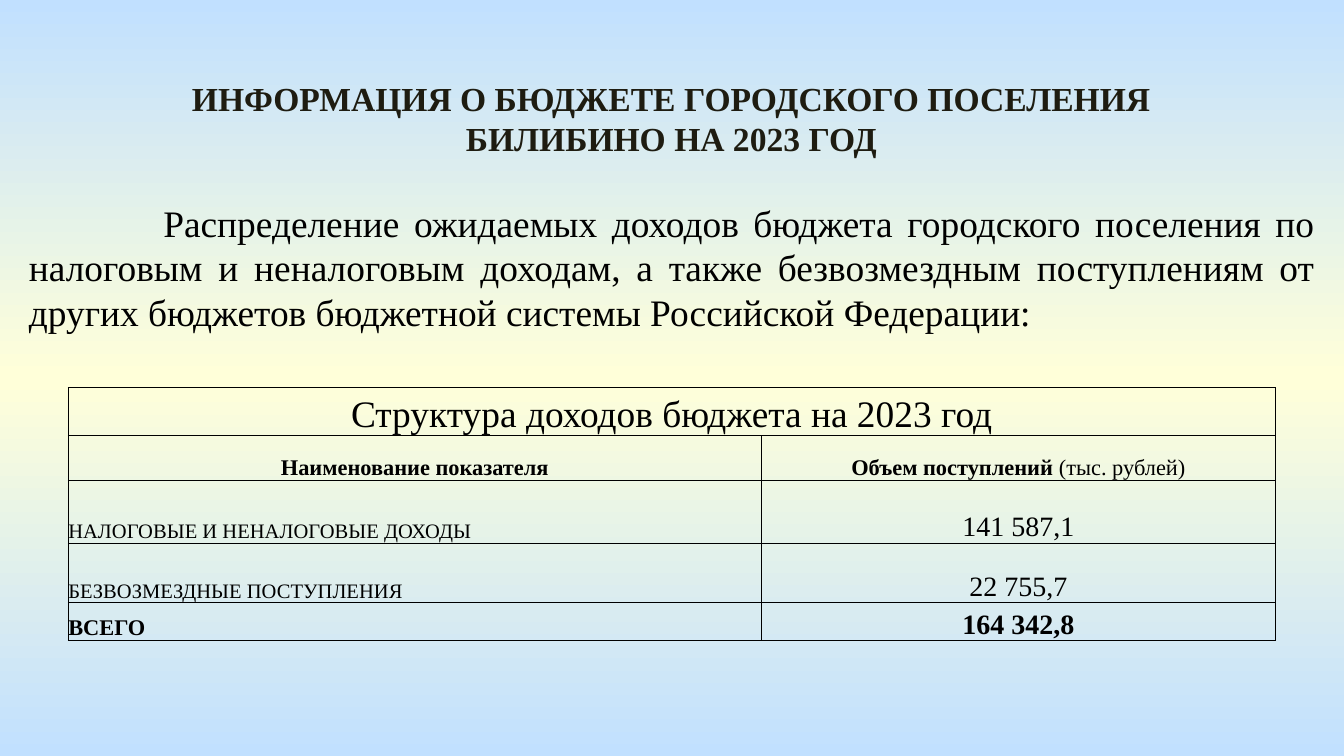
from typing import NamedTuple

from lxml.etree import SubElement
from pptx import Presentation
from pptx.dml.color import RGBColor
from pptx.enum.shapes import MSO_SHAPE as SHAPE
from pptx.enum.text import MSO_ANCHOR as ANCHOR, MSO_AUTO_SIZE as AUTO, PP_ALIGN as ALIGN
from pptx.oxml.ns import qn
from pptx.util import Pt

COLORS = {"sky": "C1E0FF", "cream": "FFFFD9", "title": "1E1C11", "text": "000000"}
FONT = "Times New Roman"


class Row(NamedTuple):
    """One table row with a name and an amount."""
    height: float
    name: str
    amount: str
    name_size: float
    amount_size: float
    bold: bool = False
    align: ALIGN = ALIGN.LEFT
    unit: str = ""
    margin: float = 0


ROWS = [
    Row(25.5, "Структура доходов бюджета на 2023 год", "", 20, 20, align=ALIGN.CENTER),
    Row(24.2, "Наименование показателя", "Объем поступлений ", 12, 12, True,
        ALIGN.CENTER, "(тыс. рублей)", 5),
    Row(33.4, "НАЛОГОВЫЕ И НЕНАЛОГОВЫЕ ДОХОДЫ", "141 587,1", 11, 15),
    Row(32, "БЕЗВОЗМЕЗДНЫЕ ПОСТУПЛЕНИЯ", "22 755,7", 11, 15),
    Row(20.4, "ВСЕГО", "164 342,8", 12, 15, True),
]


def write(p, text: str, *, size: float, bold: bool = False, color: str = "text",
          align: ALIGN = ALIGN.CENTER) -> None:
    """Add a formatted run to a paragraph."""
    p.alignment = align
    r = p.add_run()
    r.text = text
    r.font.name, r.font.size, r.font.bold = FONT, Pt(size), bold
    r.font.color.rgb = RGBColor.from_string(COLORS[color])


def paint_background(s) -> None:
    """Fill the slide with a vertical three-stop gradient."""
    fill = s.background.fill
    fill.gradient()
    fill.gradient_angle = 270
    stops = next(s.element.iter(qn("a:gsLst")))
    stops.clear()
    for pos, name in ((0, "sky"), (50, "cream"), (100, "sky")):
        stop = SubElement(stops, qn("a:gs"), pos=str(pos * 1000))
        SubElement(stop, qn("a:srgbClr"), val=COLORS[name])


def style_cell(cell, margin: float = 0) -> None:
    """Give a cell thin borders, no fill and bottom-anchored text."""
    tc_pr = cell._tc.get_or_add_tcPr()
    for side in ("lnL", "lnR", "lnT", "lnB"):
        ln = SubElement(tc_pr, qn(f"a:{side}"), w=str(Pt(0.5)))
        line_fill = SubElement(ln, qn("a:solidFill"))
        SubElement(line_fill, qn("a:srgbClr"), val=COLORS["text"])
    cell.fill.background()
    cell.vertical_anchor = ANCHOR.BOTTOM
    cell.margin_left = cell.margin_right = Pt(margin)
    cell.margin_top = cell.margin_bottom = 0


def add_title(s) -> None:
    """Add the centred slide title."""
    sp = s.shapes.add_textbox(Pt(81.4), Pt(38.2), Pt(556.6), Pt(51))
    tf = sp.text_frame
    tf.word_wrap, tf.auto_size = True, AUTO.SHAPE_TO_FIT_TEXT
    write(tf.paragraphs[0], "ИНФОРМАЦИЯ О БЮДЖЕТЕ ГОРОДСКОГО ПОСЕЛЕНИЯ БИЛИБИНО НА 2023 ГОД",
          size=18, bold=True, color="title")


def add_intro(s) -> None:
    """Add the justified paragraph on a box that shows the slide background."""
    sp = s.shapes.add_shape(SHAPE.RECTANGLE, Pt(8.4), Pt(103), Pt(703.2), Pt(80))
    sp.shadow.inherit = False
    sp.line.fill.background()
    sp.element.set("useBgFill", "1")
    tf = sp.text_frame
    tf.word_wrap, tf.auto_size = True, AUTO.SHAPE_TO_FIT_TEXT
    p = tf.paragraphs[0]
    write(p, "Распределение ожидаемых доходов бюджета городского поселения по налоговым "
          "и неналоговым доходам, а также безвозмездным поступлениям от других бюджетов "
          "бюджетной системы Российской Федерации:", size=20, align=ALIGN.JUSTIFY)
    p._p.get_or_add_pPr().set("indent", str(Pt(72)))


def add_income_table(s) -> None:
    """Add the table of budget income."""
    widths = (371.4, 275.2)
    height = sum(row.height for row in ROWS)
    table = s.shapes.add_table(len(ROWS), len(widths), Pt(36.6), Pt(207.8),
                               Pt(sum(widths)), Pt(height)).table
    table.first_row = table.horz_banding = False
    for col, width in zip(table.columns, widths):
        col.width = Pt(width)
    for i, row in enumerate(ROWS):
        table.rows[i].height = Pt(row.height)
        name, amount = table.cell(i, 0), table.cell(i, 1)
        style_cell(name)
        style_cell(amount, row.margin)
        write(name.text_frame.paragraphs[0], row.name, size=row.name_size,
              bold=row.bold, align=row.align)
        p = amount.text_frame.paragraphs[0]
        if row.amount:
            write(p, row.amount, size=row.amount_size, bold=row.bold)
        if row.unit:
            write(p, row.unit, size=row.amount_size)
    table.cell(0, 0).merge(table.cell(0, 1))


def main() -> None:
    """Build and save the slide."""
    prs = Presentation()
    prs.slide_width, prs.slide_height = Pt(720), Pt(405)
    s = prs.slides.add_slide(prs.slide_layouts[6])
    paint_background(s)
    add_intro(s)
    add_title(s)
    add_income_table(s)
    prs.save("out.pptx")


if __name__ == "__main__":
    main()
